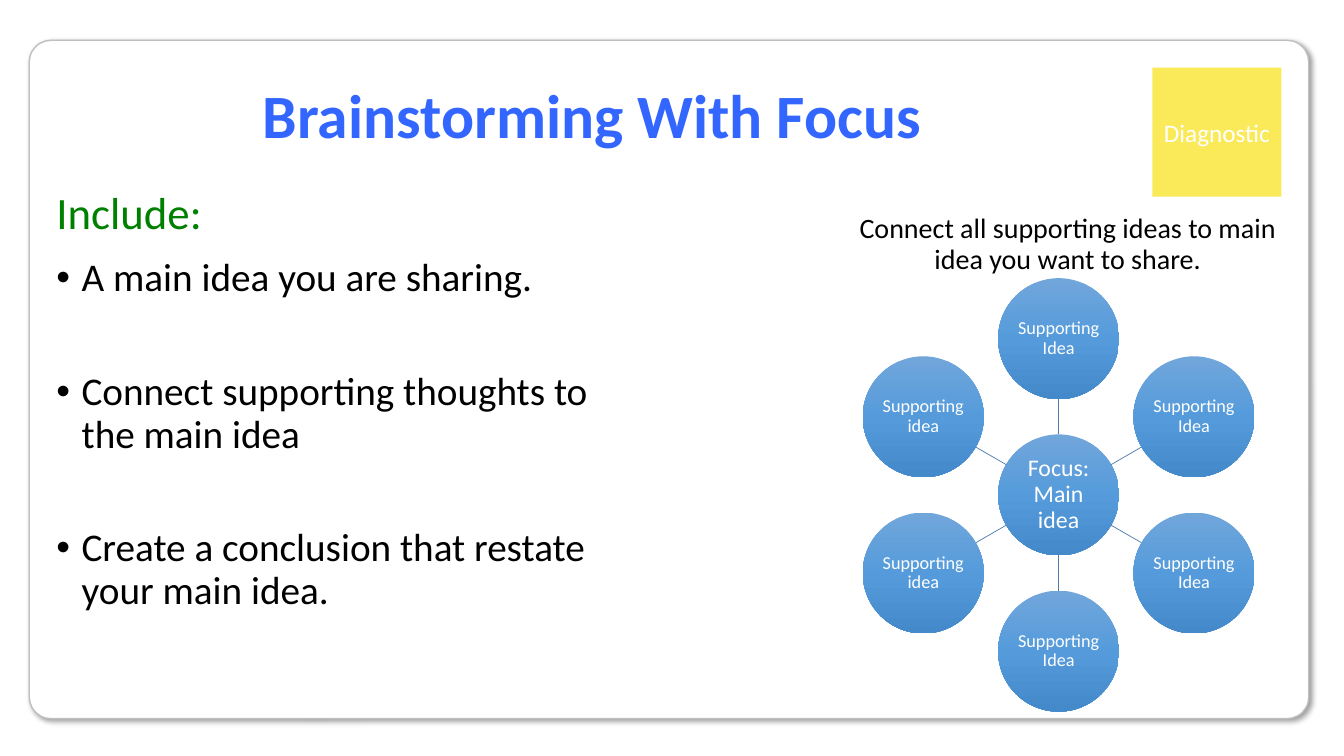
from math import cos, radians, sin

from lxml import etree
from pptx import Presentation
from pptx.dml.color import RGBColor
from pptx.enum import shapes, text
from pptx.oxml import parse_xml
from pptx.oxml.ns import nsdecls, qn
from pptx.util import Inches, Pt

WHITE = RGBColor(0xFF, 0xFF, 0xFF)
BLACK = RGBColor(0, 0, 0)
GREY = RGBColor(0xBF, 0xBF, 0xBF)
YELLOW = RGBColor(0xFA, 0xE9, 0x59)
TITLE_BLUE = RGBColor(0x33, 0x66, 0xFF)
GREEN = RGBColor(0, 0x80, 0)
SPOKE_BLUE = RGBColor(0x49, 0x7C, 0xAB)
BALL_STOPS = [
    (0, RGBColor(0x71, 0xA6, 0xDB)),
    (50, RGBColor(0x55, 0x9B, 0xDB)),
    (100, RGBColor(0x44, 0x8A, 0xCA)),
]


def write(box, lines, size, color, anchor, align, bold=False, gap=0, bullet=False, spacing=0.9):
    frame = box.text_frame
    frame.word_wrap = True
    frame.auto_size = text.MSO_AUTO_SIZE.NONE
    frame.vertical_anchor = anchor
    for number, line in enumerate(lines):
        para = frame.add_paragraph() if number else frame.paragraphs[0]
        if bullet:
            props = para._p.get_or_add_pPr()
            props.set("marL", str(Inches(0.25)))
            props.set("indent", str(Inches(-0.25)))
            etree.SubElement(props, qn("a:buFont"), typeface="Arial")
            etree.SubElement(props, qn("a:buChar"), char="•")
        para.alignment = align
        para.line_spacing = spacing
        para.space_before = Pt(gap if number else 0)
        span = para.add_run()
        span.text = line
        span.font.name = "Calibri"
        span.font.size = Pt(size)
        span.font.bold = bold
        span.font.color.rgb = color


def add_ball(x, y, label, size):
    ball = page.shapes.add_shape(
        shapes.MSO_SHAPE.OVAL, Inches(x - RADIUS), Inches(y - RADIUS),
        Inches(2 * RADIUS), Inches(2 * RADIUS))
    ball.shadow.inherit = False
    ball.line.fill.background()
    stops = "".join(
        f'<a:gs pos="{place * 1000}"><a:srgbClr val="{color}"/></a:gs>'
        for place, color in BALL_STOPS)
    ball.element.spPr.insert(2, parse_xml(
        f'<a:gradFill {nsdecls("a")} rotWithShape="1"><a:gsLst>{stops}</a:gsLst>'
        '<a:lin ang="5400000" scaled="0"/></a:gradFill>'))
    frame = ball.text_frame
    frame.margin_left = frame.margin_right = Inches(0.01)
    frame.margin_top = frame.margin_bottom = Inches(0.01)
    write(ball, [label], size, WHITE, MIDDLE, CENTER)


TOP, MIDDLE = text.MSO_ANCHOR.TOP, text.MSO_ANCHOR.MIDDLE
LEFT, CENTER = text.PP_ALIGN.LEFT, text.PP_ALIGN.CENTER

deck = Presentation()
deck.slide_width, deck.slide_height = Inches(13.33), Inches(7.5)
page = deck.slides.add_slide(deck.slide_layouts.get_by_name("Comparison"))
title, include, points, caption, spare = page.placeholders
spare.element.getparent().remove(spare.element)

card = page.shapes.add_shape(
    shapes.MSO_SHAPE.ROUNDED_RECTANGLE, Inches(0.29), Inches(0.4), Inches(12.69), Inches(6.73))
card.adjustments[0] = 0.032
card.fill.solid()
card.fill.fore_color.rgb = WHITE
card.line.color.rgb = GREY
card.line.width = Pt(1)
card.shadow.inherit = False
effects = card.element.spPr.find(qn("a:effectLst"))
effects.append(parse_xml(
    f'<a:outerShdw {nsdecls("a")} blurRad="{Pt(4)}" dist="{Pt(3)}" dir="2700000" algn="tl" '
    'rotWithShape="0"><a:srgbClr val="000000"><a:alpha val="40000"/></a:srgbClr></a:outerShdw>'))

badge = page.shapes.add_shape(
    shapes.MSO_SHAPE.RECTANGLE, Inches(11.43), Inches(0.67), Inches(1.28), Inches(1.28))
badge.shadow.inherit = False
badge.fill.solid()
badge.fill.fore_color.rgb = YELLOW
badge.line.fill.background()
write(badge, ["Diagnostic"], 18, WHITE, MIDDLE, CENTER, spacing=1)
for backdrop in (card, badge):
    title.element.addprevious(backdrop.element)

for box, place in (
    (title, (0.46, 0.4, 10.83, 1.55)),
    (include, (0.46, 1.84, 5.64, 0.9)),
    (points, (0.46, 2.51, 5.64, 3.89)),
    (caption, (8.35, 2.08, 4.48, 0.9)),
):
    box.left, box.top, box.width, box.height = map(Inches, place)

write(title, ["Brainstorming With Focus"], 44, TITLE_BLUE, MIDDLE, CENTER, bold=True)
write(include, ["Include:"], 32, GREEN, TOP, LEFT)
write(points, [
    "A main idea you are sharing.",
    "Connect supporting thoughts to the main idea",
    "Create a conclusion that restate your main idea.",
], 28, BLACK, TOP, LEFT, gap=51, bullet=True)
write(caption, ["Connect all supporting ideas to main idea you want to share."],
      20, BLACK, TOP, CENTER)

HUB_X, HUB_Y = 10.5, 4.91
RADIUS, ORBIT = 0.6, 1.55
IDEAS = ["Supporting Idea"] * 4 + ["Supporting idea"] * 2

add_ball(HUB_X, HUB_Y, "Focus: Main idea", 17)
for number, idea in enumerate(IDEAS):
    angle = radians(60 * number - 90)
    across, down = cos(angle), sin(angle)
    reach = ORBIT - RADIUS
    spoke = page.shapes.add_connector(
        shapes.MSO_CONNECTOR.STRAIGHT,
        Inches(HUB_X + RADIUS * across), Inches(HUB_Y + RADIUS * down),
        Inches(HUB_X + reach * across), Inches(HUB_Y + reach * down))
    spoke.line.color.rgb = SPOKE_BLUE
    spoke.line.width = Pt(0.5)
    etree.SubElement(spoke.element.spPr, qn("a:effectLst"))
    add_ball(HUB_X + ORBIT * across, HUB_Y + ORBIT * down, idea, 13)

deck.save("out.pptx")
